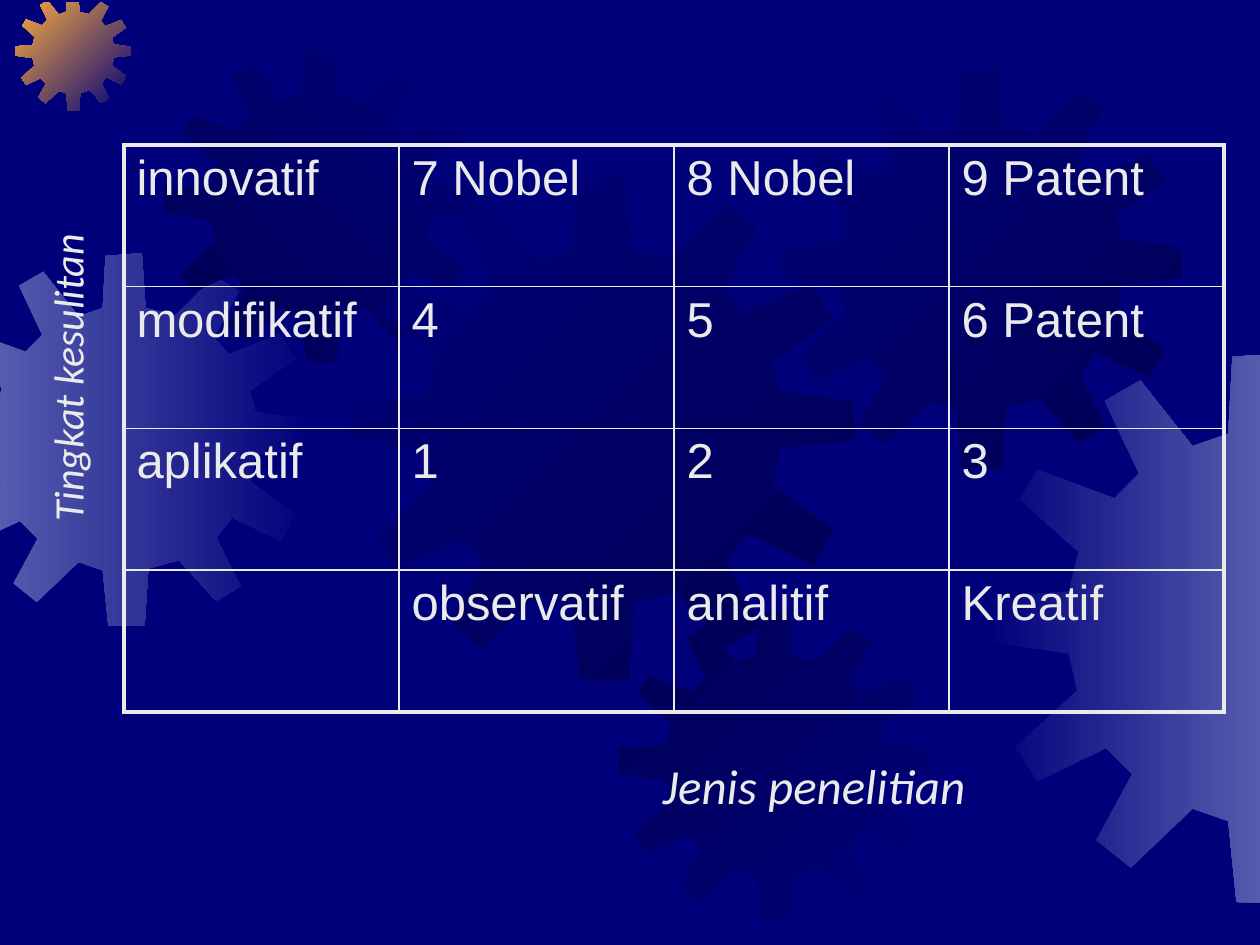
from lxml import etree
from pptx import Presentation
from pptx.dml.color import RGBColor
from pptx.enum import text
from pptx.oxml.ns import qn
from pptx.util import Pt

WIDE, HIGH = 720, 540
NAVY, DARK, HAZE, GOLD, PALE = "00007A", "000054", "555BAD", "FCAB40", "EAEAEA"

# Outline of one gear, drawn in a square of side SPAN
SPAN = 401
TEETH = [
    (255, 67), (223, 59), (219, 0), (180, 3), (177, 59), (151, 68),
    (113, 20), (87, 35), (112, 88), (94, 106), (38, 85), (25, 107),
    (68, 145), (61, 174), (1, 178), (0, 210), (61, 219), (67, 246),
    (22, 287), (38, 312), (88, 288), (107, 307), (81, 355), (106, 375),
    (151, 332), (177, 341), (183, 400), (222, 401), (226, 339), (259, 330),
    (299, 374), (325, 358), (299, 306), (316, 284), (368, 309), (384, 281),
    (336, 246), (342, 216), (401, 210), (400, 180), (341, 171), (335, 148),
    (383, 114), (367, 87), (313, 109), (296, 91), (323, 41), (297, 25),
]

# left, top, side, first colour, last colour, clockwise angle
GEARS = [
    (-35.3, 144.7, 213.1, HAZE, NAVY, 0),
    (8.6, -2.9, 66.2, GOLD, NAVY, 45),
    (93.6, 28.1, 178.6, DARK, NAVY, 315),
    (199.4, 100.1, 289, NAVY, DARK, 45),
    (353.5, 348.5, 178.6, DARK, NAVY, 45),
    (445, 38.2, 230.4, NAVY, DARK, 45),
    (563, 201.6, 314.6, NAVY, HAZE, 0),
]

ROWS = [
    ["innovatif", "7 Nobel", "8 Nobel", "9 Patent"],
    ["modifikatif", "4", "5", "6 Patent"],
    ["aplikatif", "1", "2", "3"],
    ["", "observatif", "analitif", "Kreatif"],
]


def color(hue):
    return RGBColor.from_string(hue)


def add_run(para, words, size, font, slant=False):
    run = para.add_run()
    run.text = words
    run.font.size = Pt(size)
    run.font.name = font
    run.font.italic = slant
    run.font.color.rgb = color(PALE)


def clip(dots, axis, edge, sign):
    """Keep the part of a polygon on one side of an upright or level edge."""
    kept = []
    for last, dot in zip(dots[-1:] + dots[:-1], dots):
        a, b = (sign * (p[axis] - edge) for p in (last, dot))
        if (a < 0) != (b < 0):
            part = a / (a - b)
            kept.append(tuple(p + part * (q - p) for p, q in zip(last, dot)))
        if b >= 0:
            kept.append(dot)
    return kept


def add_gear(slide, left, top, side, first, last, angle):
    dots = [(left + x * side / SPAN, top + y * side / SPAN) for x, y in TEETH]
    for axis, edge, sign in ((0, 0, 1), (0, WIDE, -1), (1, 1.4, 1), (1, HIGH, -1)):
        dots = clip(dots, axis, edge, sign)
    dots = [(Pt(x), Pt(y)) for x, y in dots]
    pen = slide.shapes.build_freeform(*dots[0])
    pen.add_line_segments(dots[1:], close=True)
    gear = pen.convert_to_shape()
    gear.shadow.inherit = False
    gear.line.fill.background()
    gear.fill.gradient()
    gear.fill.gradient_angle = (360 - angle) % 360
    for stop, hue in zip(gear.fill.gradient_stops, (first, last)):
        stop.color.rgb = color(hue)


def add_edge(props, spot, side, width):
    line = etree.Element(qn("a:ln" + side), w=str(Pt(width)))
    fill = etree.SubElement(line, qn("a:solidFill"))
    etree.SubElement(fill, qn("a:srgbClr"), val=PALE)
    props.insert(spot, line)


def add_grid(slide, left, top, width, height):
    rows, cols = len(ROWS), len(ROWS[0])
    grid = slide.shapes.add_table(
        rows, cols, Pt(left), Pt(top), Pt(width), Pt(height)).table
    grid.first_row = grid.horz_banding = False
    for r, row in enumerate(ROWS):
        for c, words in enumerate(row):
            cell = grid.cell(r, c)
            cell.fill.background()
            if words:
                add_run(cell.text_frame.paragraphs[0], words, 28, "Arial")
            # Thick outer frame, thin inner rules
            outer = {"L": c == 0, "R": c == cols - 1,
                     "T": r == 0, "B": r == rows - 1}
            props = cell._tc.get_or_add_tcPr()
            for spot, (side, rim) in enumerate(outer.items()):
                add_edge(props, spot, side, 2.25 if rim else 1)


def add_label(slide, left, top, width, height, words, size, align, turn="horz"):
    box = slide.shapes.add_textbox(Pt(left), Pt(top), Pt(width), Pt(height))
    frame = box.text_frame
    frame.word_wrap = True
    frame._txBody.bodyPr.set("vert", turn)
    para = frame.paragraphs[0]
    para.alignment = align
    add_run(para, words, size, "Calibri", True)


def main():
    deck = Presentation()
    deck.slide_width, deck.slide_height = Pt(WIDE), Pt(HIGH)
    slide = deck.slides.add_slide(deck.slide_layouts[6])

    # Backdrop
    slide.background.fill.solid()
    slide.background.fill.fore_color.rgb = color(NAVY)
    for gear in GEARS:
        add_gear(slide, *gear)

    # Matrix and its axis labels
    add_grid(slide, 70.8, 82.8, 628.8, 324)
    add_label(slide, 241.2, 428.4, 447.8, 41, "Jenis penelitian", 28,
              text.PP_ALIGN.CENTER)
    add_label(slide, 20.2, 94.3, 43.9, 211, "Tingkat kesulitan", 24,
              text.PP_ALIGN.LEFT, "vert270")

    deck.save("out.pptx")


if __name__ == "__main__":
    main()
